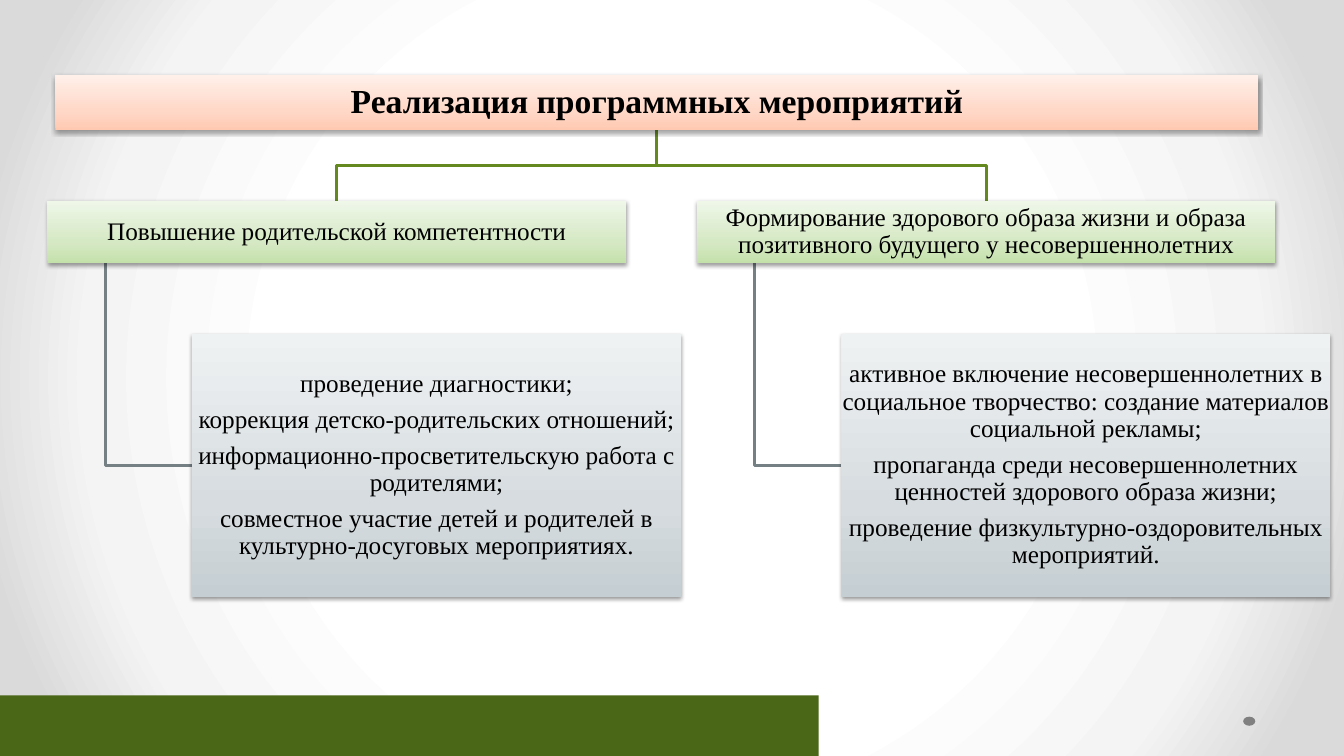
from lxml import etree
from pptx import Presentation
from pptx import util as u
from pptx.dml.color import RGBColor
from pptx.enum import shapes, text
from pptx.oxml import ns

HEADS = [
    "Повышение родительской компетентности",
    "Формирование здорового образа жизни и образа позитивного будущего у несовершеннолетних",
]
LISTS = [
    [
        "проведение диагностики;",
        "коррекция детско-родительских отношений;",
        "информационно-просветительскую работа с родителями;",
        "совместное участие детей и родителей в культурно-досуговых мероприятиях.",
    ],
    [
        "активное включение несовершеннолетних в социальное творчество: создание материалов социальной рекламы;",
        "пропаганда среди несовершеннолетних ценностей здорового образа жизни;",
        "проведение физкультурно-оздоровительных мероприятий.",
    ],
]
PEACH = [(0, "FFC9B1"), (35, "FFD8C8"), (100, "FFF0EA")]
GREEN = [(0, "C5E1AB"), (35, "D6E9C5"), (100, "EFF7E9")]
SLATE = [(0, "C5CED2"), (35, "D6DCDF"), (100, "EFF2F3")]
LEFT, STEP = 0.47, 6.44
HEAD_W, HEAD_TOP, HEAD_H = 5.74, 1.99, 0.62
LIST_W, LIST_TOP, LIST_H = 4.85, 3.31, 2.61
TITLE = (0.55, 0.74, 11.93, 0.55)


def tag(parent, name, **attrs):
    return etree.SubElement(parent, ns.qn(name), attrs)


def paint(item, root, stops):
    item.fill.gradient()
    grad = next(root.iter(ns.qn("a:gradFill")))
    for kid in list(grad):
        grad.remove(kid)
    row = tag(grad, "a:gsLst")
    for pos, tint in stops:
        tag(tag(row, "a:gs", pos=str(pos * 1000)), "a:srgbClr", val=tint)
    return grad


hue = RGBColor.from_string
deck = Presentation()
deck.slide_width, deck.slide_height = u.Inches(13.33), u.Inches(7.5)
slide = deck.slides.add_slide(deck.slide_layouts[4])
glow = paint(slide.background, slide.element, [(50, "FFFFFF"), (76, "F4F4F4"), (92, "DADADA")])
tag(tag(glow, "a:path", path="circle"), "a:fillToRect", l="50000", t="50000", r="50000", b="50000")

for kind, area, tint in [
    (shapes.MSO_SHAPE.OVAL, (12.33, 7.11, 0.12, 0.09), "808080"),
    (shapes.MSO_SHAPE.RECTANGLE, (0, 6.9, 8.12, 0.6), "4A6717"),
]:
    mark = slide.shapes.add_shape(kind, *map(u.Inches, area))
    mark.shadow.inherit = False
    mark.fill.solid()
    mark.fill.fore_color.rgb = hue(tint)
    mark.line.fill.background()

boxes = [(0, TITLE, PEACH, ["Реализация программных мероприятий"], 24)]
lines = []
mid, low = TITLE[0] + TITLE[2] / 2, TITLE[1] + TITLE[3]
bend = (low + HEAD_TOP) / 2
for col in range(2):
    x = LEFT + col * STEP
    stem, inner, heart = x + HEAD_W / 10, x + HEAD_W / 4, x + HEAD_W / 2
    half = LIST_TOP + LIST_H / 2
    boxes.append((1 + 2 * col, (x, HEAD_TOP, HEAD_W, HEAD_H), GREEN, [HEADS[col]], 18))
    boxes.append((2 + 2 * col, (inner, LIST_TOP, LIST_W, LIST_H), SLATE, LISTS[col], 18))
    lines.append(("758085", [(stem, HEAD_TOP + HEAD_H), (stem, half), (inner, half)]))
    lines.append(("63891F", [(mid, low), (mid, bend), (heart, bend), (heart, HEAD_TOP)]))

for tint, spots in lines:
    spots = [(u.Inches(a), u.Inches(b)) for a, b in spots]
    pen = slide.shapes.build_freeform(*spots[0], scale=1.0)
    pen.add_line_segments(spots[1:], close=False)
    link = pen.convert_to_shape()
    link.shadow.inherit = False
    link.fill.background()
    link.line.color.rgb = hue(tint)
    link.line.width = u.Pt(2.25)

holders = {item.placeholder_format.idx: item for item in slide.placeholders}
for idx, area, stops, words, size in boxes:
    box = holders[idx]
    box.element.getparent().append(box.element)
    box.left, box.top, box.width, box.height = map(u.Inches, area)
    tag(paint(box, box.element, stops), "a:lin", ang="16200000", scaled="0")
    cast = tag(tag(box.element.spPr, "a:effectLst"), "a:outerShdw", blurRad=str(u.Pt(3.1)),
               dist=str(u.Pt(1.6)), dir="5400000", rotWithShape="0")
    tag(tag(cast, "a:srgbClr", val="000000"), "a:alpha", val="38000")
    frame = box.text_frame
    frame.text = "\n".join(words)
    frame.word_wrap = True
    frame.auto_size = text.MSO_AUTO_SIZE.NONE
    frame.vertical_anchor = text.MSO_ANCHOR.MIDDLE
    frame.margin_left = frame.margin_right = u.Inches(0.01)
    frame.margin_top = frame.margin_bottom = u.Inches(0.01)
    for para in frame.paragraphs:
        props = para._p.get_or_add_pPr()
        props.set("marL", "0")
        props.set("indent", "0")
        tag(props, "a:buNone")
        para.alignment = text.PP_ALIGN.CENTER
        para.line_spacing = 0.9
        para.space_before = u.Pt(0)
        para.space_after = u.Pt(size * 0.35)
        for run in para.runs:
            run.font.name = "Times New Roman"
            run.font.size = u.Pt(size)
            run.font.bold = idx == 0
            run.font.color.rgb = hue("000000")

deck.save("out.pptx")
